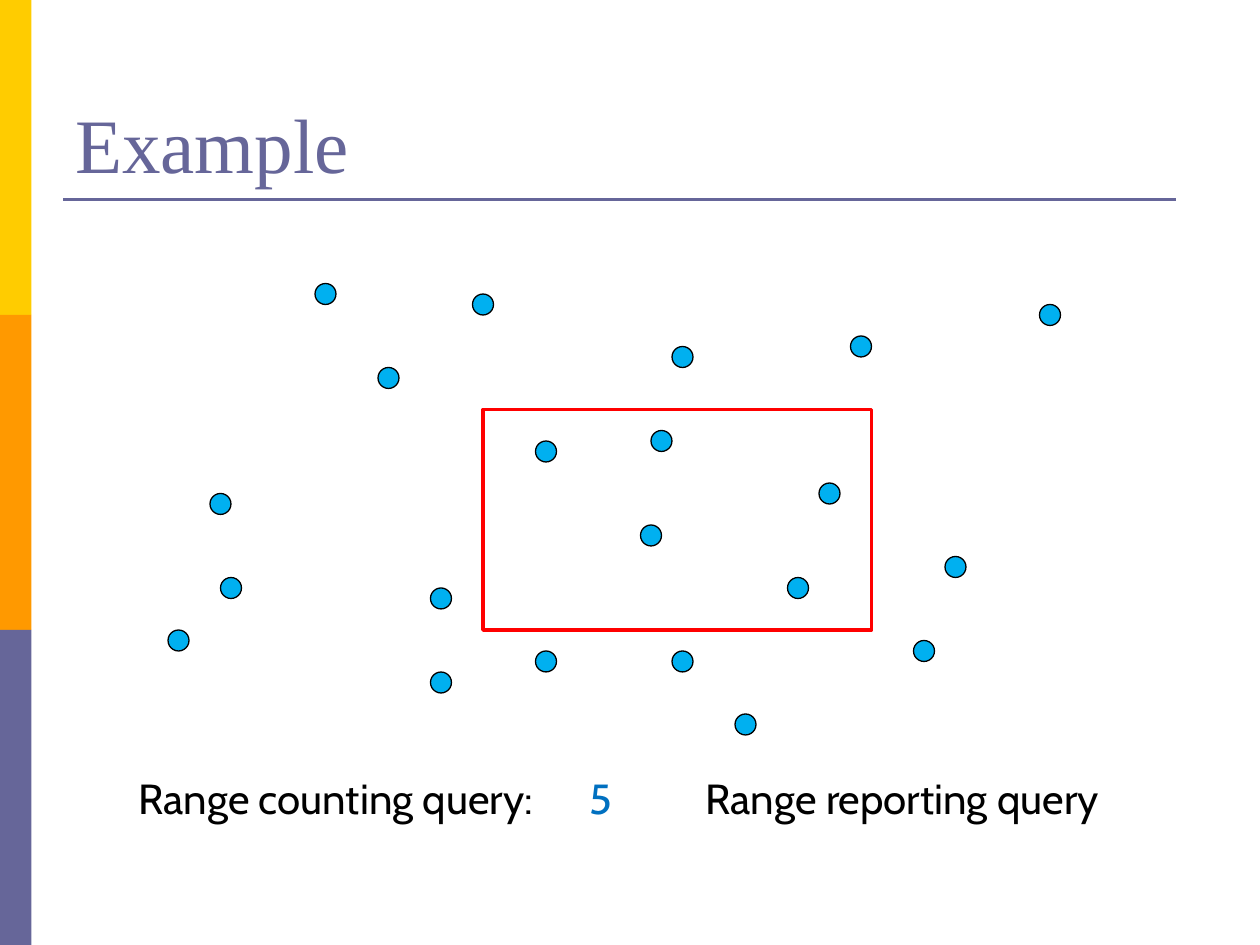
import pptx
import pptx.dml.color
import pptx.enum.shapes
import pptx.enum.text
import pptx.oxml.ns
import pptx.util
import lxml.etree

Cm = pptx.util.Cm
Pt = pptx.util.Pt
RGBColor = pptx.dml.color.RGBColor
Kind = pptx.enum.shapes.MSO_SHAPE
Anchor = pptx.enum.text.MSO_ANCHOR

GOLD = RGBColor(0xFF, 0xCC, 0x00)
ORANGE = RGBColor(0xFF, 0x99, 0x00)
SLATE = RGBColor(0x66, 0x66, 0x99)
SKY = RGBColor(0x00, 0xB0, 0xF0)
BLUE = RGBColor(0x00, 0x70, 0xC0)
RED = RGBColor(0xFF, 0x00, 0x00)
BLACK = RGBColor(0x00, 0x00, 0x00)

STEP = 2.54 / 12
DOT = 2
POINTS = [
    (30, 27), (45, 28), (36, 35), (81, 32), (64, 33), (51, 42), (20, 47),
    (78, 46), (62, 41), (75, 55), (61, 50), (41, 56), (90, 53), (51, 62),
    (41, 64), (64, 62), (87, 61), (99, 29), (70, 68), (21, 55), (16, 60),
]


def grid(*units):
    return [Cm(unit * STEP) for unit in units]


def apply(item, style):
    for name, value in style.items():
        setattr(item, name, value)


def add_form(slide, kind, box, fill=None, line=None, width=0.75):
    form = slide.shapes.add_shape(kind, *grid(*box))
    form.shadow.inherit = False
    if fill is None:
        form.fill.background()
    else:
        form.fill.solid()
        form.fill.fore_color.rgb = fill
    if line is None:
        form.line.fill.background()
    else:
        form.line.color.rgb = line
        form.line.width = Pt(width)


def add_rule(slide, ends, color, width):
    rule = slide.shapes.add_connector(
        pptx.enum.shapes.MSO_CONNECTOR.STRAIGHT, *grid(*ends))
    rule.line.color.rgb = color
    rule.line.width = Pt(width)
    lxml.etree.SubElement(
        rule._element.spPr, pptx.oxml.ns.qn("a:effectLst"))


def add_text(slide, words, box, color, font="Cabin", size=24, **frame):
    text = slide.shapes.add_textbox(*grid(*box)).text_frame
    apply(text, {"word_wrap": True, **frame})
    run = text.paragraphs[0].add_run()
    run.text = words
    apply(run.font, {"name": font, "size": Pt(size)})
    run.font.color.rgb = color


def main():
    deck = pptx.Presentation()
    apply(deck, {"slide_width": Cm(25.4), "slide_height": Cm(19.05)})
    slide = deck.slides.add_slide(deck.slide_layouts[6])

    for row, color in enumerate([GOLD, ORANGE, SLATE]):
        add_form(slide, Kind.RECTANGLE, (0, row * 30, 3, 30), color)
    add_rule(slide, (6, 19, 112, 19), SLATE, 1.5)
    add_text(slide, "Example", (6, 3.6, 108, 15), SLATE,
             "Times New Roman", 44, vertical_anchor=Anchor.BOTTOM)

    for left, top in POINTS:
        add_form(slide, Kind.OVAL, (left, top, DOT, DOT), SKY, BLACK)
    add_form(slide, Kind.RECTANGLE, (46, 39, 37, 21), line=RED, width=2)

    add_text(slide, "Range counting query:", (12, 73, 43, 6), BLACK)
    add_text(slide, "Range reporting query", (66, 73, 42.4, 6), BLACK,
             word_wrap=False)
    add_text(slide, "5", (55, 73, 5, 6), BLUE)

    deck.save("out.pptx")


if __name__ == "__main__":
    main()
